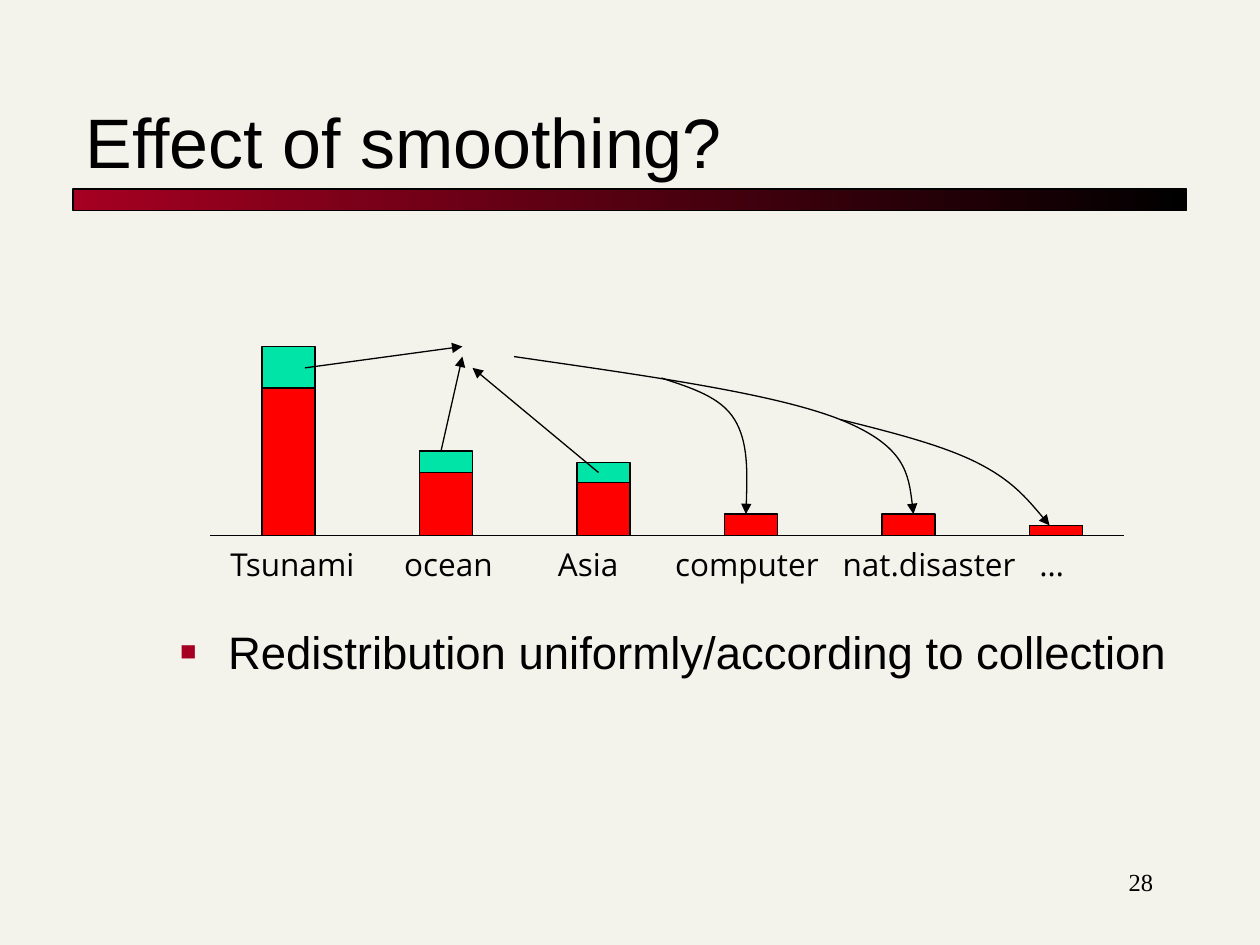
"""Build the slide on the effect of smoothing."""
import pptx
import pptx.dml.color
import pptx.enum.shapes
import pptx.enum.text
import pptx.oxml
import pptx.oxml.ns
import pptx.util
from pptx.util import Inches


def tint(color, code):
    color.rgb = pptx.dml.color.RGBColor.from_string(code)


def edge(shape, arrow=False):
    shape.line.width = pptx.util.Pt(0.75)
    shape.line.fill.solid()
    tint(shape.line.color, "000000")
    if arrow:
        tail = pptx.oxml.parse_xml(
            f'<a:tailEnd {pptx.oxml.ns.nsdecls("a")} type="triangle"/>')
        shape.line._get_or_add_ln().append(tail)
    shape._element.spPr.append(
        pptx.oxml.parse_xml(f'<a:effectLst {pptx.oxml.ns.nsdecls("a")}/>'))


RECT = pptx.enum.shapes.MSO_SHAPE.RECTANGLE
STRAIGHT = pptx.enum.shapes.MSO_CONNECTOR.STRAIGHT
ALIGN = pptx.enum.text.PP_ALIGN
ANCHOR = pptx.enum.text.MSO_ANCHOR
BASE, WIDTH = 4.25, 0.42

deck = pptx.Presentation()
deck.slide_width, deck.slide_height = Inches(10), Inches(7.5)
slide = deck.slides.add_slide(deck.slide_layouts[1])
slide.background.fill.solid()
tint(slide.background.fill.fore_color, "F4F3EB")
shapes = slide.shapes

band = shapes.add_shape(RECT, Inches(0.58), Inches(1.5), Inches(8.84), Inches(0.17))
band.fill.gradient()
band.fill.gradient_angle = 0
for stop, code in zip(band.fill.gradient_stops, ("A50021", "000000")):
    tint(stop.color, code)
edge(band)

title, body = shapes.title, slide.placeholders[1]
labels = shapes.add_textbox(0, 0, 0, 0)
number = shapes.add_textbox(0, 0, 0, 0)
words = "Tsunami\tocean\tAsia\tcomputer\tnat.disaster\t…"
texts = [
    (title, (0.58, 0.42, 8.83, 1.08), "Effect of smoothing?", 40, "Arial", ALIGN.LEFT, ANCHOR.BOTTOM),
    (body, (1.33, 4.9, 8.5, 1.93), "Redistribution uniformly/according to collection", 26, "Arial", ALIGN.LEFT, ANCHOR.TOP),
    (labels, (1.73, 4.28, 7.2, 0.4), words, 18, "Open Sans", ALIGN.LEFT, ANCHOR.TOP),
    (number, (7.17, 6.83, 2.08, 0.5), "28", 14, "Times New Roman", ALIGN.RIGHT, ANCHOR.TOP),
]
for box, place, words, size, font, align, anchor in texts:
    box.left, box.top, box.width, box.height = map(Inches, place)
    frame = box.text_frame
    frame.word_wrap = True
    frame.auto_size = pptx.enum.text.MSO_AUTO_SIZE.NONE
    frame.vertical_anchor = anchor
    para = frame.paragraphs[0]
    para.alignment = align
    para.space_before = pptx.util.Pt(0)
    run = para.add_run()
    run.text = words
    run.font.size = pptx.util.Pt(size)
    run.font.name = font
    tint(run.font.color, "000000")

props = body.text_frame.paragraphs[0]._p.get_or_add_pPr()
props.set("marL", str(Inches(0.38)))
props.set("indent", str(-Inches(0.38)))
marks = ('<a:buClr><a:srgbClr val="A50021"/></a:buClr>', '<a:buSzPct val="60000"/>',
         '<a:buFont typeface="Arial"/>', '<a:buChar char="■"/>')
for mark in marks:
    props.append(pptx.oxml.parse_xml(
        mark.replace(" ", f' {pptx.oxml.ns.nsdecls("a")} ', 1)
        if not mark.startswith("<a:buClr>")
        else mark.replace("<a:buClr>", f'<a:buClr {pptx.oxml.ns.nsdecls("a")}>')))

tabs = "".join(f'<a:tab pos="{Inches(stop)}" algn="l"/>' for stop in (1.38, 2.6, 3.53, 4.86, 6.42))
labels.text_frame.paragraphs[0]._p.get_or_add_pPr().append(
    pptx.oxml.parse_xml(f'<a:tabLst {pptx.oxml.ns.nsdecls("a")}>{tabs}</a:tabLst>'))

bars = [(2.08, 1.5, 1.17), (3.33, 0.67, 0.5), (4.58, 0.58, 0.42),
        (5.75, 0, 0.17), (7, 0, 0.17), (8.17, 0, 0.08)]
for left, total, kept in bars:
    for high, code in ((total, "00E4A8"), (kept, "FF0000")):
        if high:
            bar = shapes.add_shape(RECT, Inches(left), Inches(BASE - high), Inches(WIDTH), Inches(high))
            bar.fill.solid()
            tint(bar.fill.fore_color, code)
            edge(bar)

lines = [(1.67, BASE, 8.92, BASE, False), (2.42, 2.92, 3.67, 2.75, True),
         (3.5, 3.58, 3.67, 2.83, True), (4.75, 3.75, 3.75, 2.92, True)]
for *ends, arrow in lines:
    edge(shapes.add_connector(STRAIGHT, *map(Inches, ends)), arrow)

curves = [
    [(4.08, 2.83), (5.11, 2.98), (6.14, 3.12), (6.67, 3.33), (7.19, 3.54), (7.22, 3.81), (7.25, 4.08)],
    [(6.67, 3.33), (7.07, 3.43), (7.47, 3.53), (7.75, 3.67), (8.03, 3.81), (8.18, 3.99), (8.33, 4.17)],
    [(5.25, 3), (5.49, 3.08), (5.72, 3.15), (5.83, 3.33), (5.94, 3.51), (5.93, 3.8), (5.92, 4.08)],
]
for curve in curves:
    start, *rest = [(Inches(x), Inches(y)) for x, y in curve]
    pen = shapes.build_freeform(*start)
    pen.add_line_segments(rest, close=False)
    arc = pen.convert_to_shape()
    steps = arc._element.xpath(".//a:lnTo")
    for i in range(0, len(steps), 3):
        bend = pptx.oxml.parse_xml(f'<a:cubicBezTo {pptx.oxml.ns.nsdecls("a")}/>')
        steps[i].addprevious(bend)
        for step in steps[i:i + 3]:
            bend.append(step[0])
            step.getparent().remove(step)
    arc.fill.background()
    edge(arc, True)

deck.save("out.pptx")
